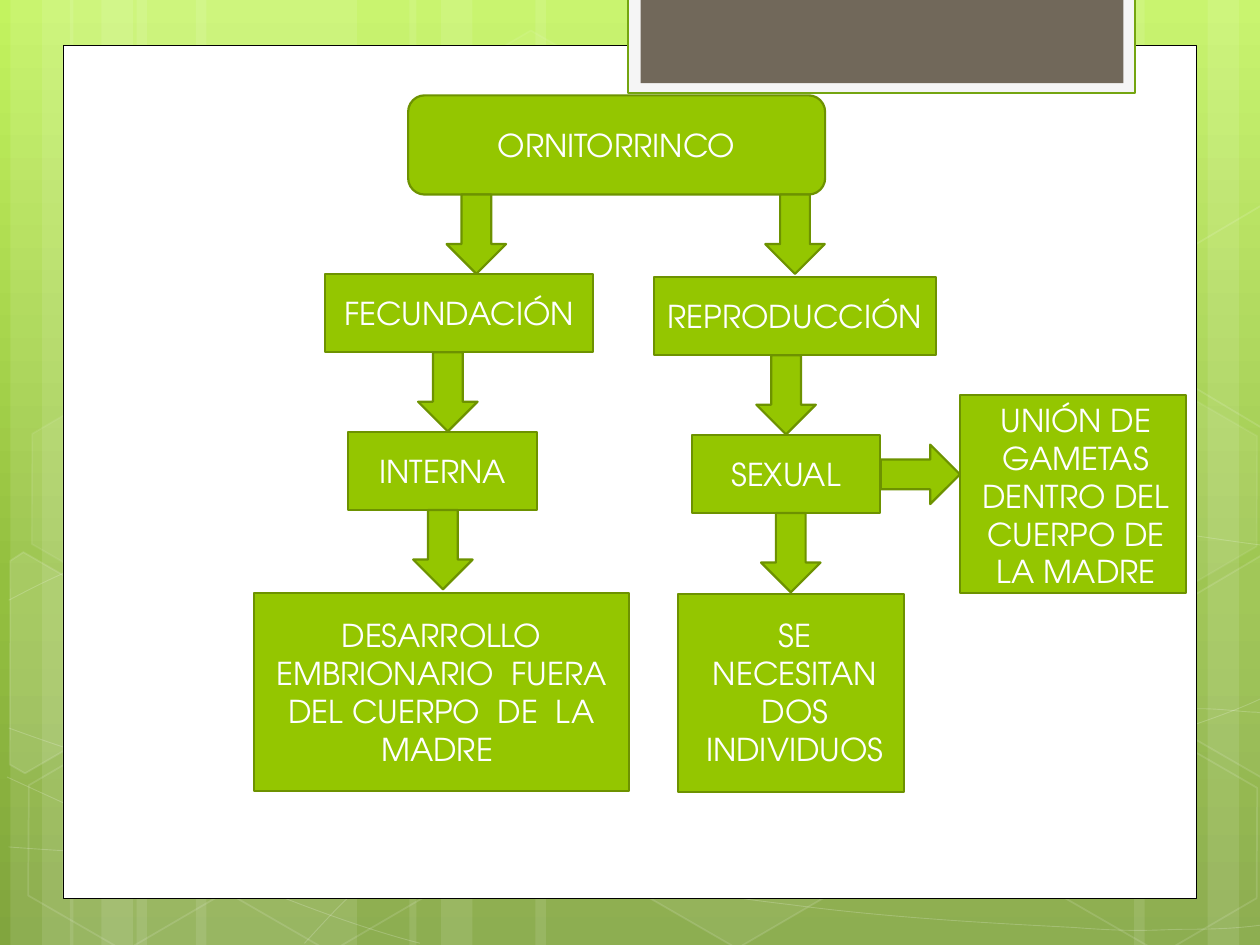
from copy import deepcopy
from math import cos, radians, sin
from lxml import etree
from pptx import Presentation
from pptx.dml.color import RGBColor
from pptx.enum.shapes import MSO_SHAPE as SHAPE
from pptx.enum.text import MSO_ANCHOR, MSO_AUTO_SIZE, PP_ALIGN
from pptx.oxml.ns import qn
from pptx.util import Pt

WHITE, GREEN, DARK_GREEN = "FFFFFF", "94C600", "6D9200"
FONT = "TeX Gyre Adventor"
TILT = 30


def colour(fill, value, opacity=100):
    fill.solid()
    fill.fore_color.rgb = RGBColor.from_string(value)
    if opacity < 100:
        rgb = fill._xPr.find(qn("a:solidFill"))[0]
        etree.SubElement(rgb, qn("a:alpha"), val=str(opacity * 1000))


def style(shape, fill=None, line=None, width=1.25, fill_opacity=100, line_opacity=100):
    shape.shadow.inherit = False
    if fill:
        colour(shape.fill, fill, fill_opacity)
    else:
        shape.fill.background()
    if line:
        colour(shape.line.fill, line, line_opacity)
        shape.line.width = Pt(width)
    else:
        shape.line.fill.background()


prs = Presentation()
prs.slide_width, prs.slide_height = Pt(720), Pt(540)
slide = prs.slides.add_slide(prs.slide_layouts[6])
shapes = slide.shapes

backdrop = slide.background.fill
backdrop.gradient()
backdrop.gradient_angle = 270
stop_list = slide.element.find(".//" + qn("a:gsLst"))
stop_list.append(deepcopy(stop_list[-1]))
gradient = [(0, "C3F35F"), (0.62, "93BF3F"), (1, "81A53E")]
for stop, (position, value) in zip(backdrop.gradient_stops, gradient):
    stop.position = position
    stop.color.rgb = RGBColor.from_string(value)

stripes = [(78, 126, 0), (6, 36, 0), (24, 60, 0), (112, 126, 0), (40, 36, 0), (58, 60, 0),
           (528, 126, 180), (690, 36, 180), (648, 60, 180),
           (306, 222, 0), (234, 36, 0), (252, 60, 0)]
for left, width, rotation in stripes:
    stripe = shapes.add_shape(SHAPE.RECTANGLE, Pt(left), 0, Pt(width), Pt(540))
    stripe.rotation = rotation
    style(stripe, WHITE, fill_opacity=10)

waves = [
    [(5, 484.5), (44, 487), (83, 489), (137, 488), (191, 487), (258, 486), (330, 479),
     (402, 472), (504, 458), (570, 444), (636, 431), (703, 409), (725, 397)],
    [(5, 343), (26, 332), (47, 321), (87, 310), (128, 300), (186, 284), (250, 279),
     (314, 274), (392, 273), (471, 279), (550, 284), (682, 307), (725, 312)],
    [(4, 444), (91, 484), (177, 523), (240, 539)],
    [(5, 416), (27, 424), (50, 432), (92, 444), (134, 454), (197, 472), (257, 485),
     (317, 497), (392, 510), (452, 517), (512, 525), (576, 528), (614, 530),
     (652, 533), (662, 531), (680, 531), (699, 531), (712, 530), (725, 528)],
    [(174, 539), (187, 525), (200, 510), (217, 498), (235, 485), (259, 470), (279, 460),
     (300, 450), (312, 446), (338, 438), (364, 431), (413, 421), (438, 416),
     (464, 411), (467, 411), (490, 410), (512, 408), (547, 405), (572, 405),
     (597, 404), (638, 405), (638, 405), (654, 405), (670, 405), (686, 405),
     (699, 405), (711, 407), (718, 407), (724, 408), (722, 407), (724, 408)],
]
for knots in waves:
    builder = shapes.build_freeform(*knots[0], scale=Pt(1))
    builder.add_line_segments(knots[1:], close=False)
    wave = builder.convert_to_shape()
    segments = list(wave.element.iter(qn("a:lnTo")))
    for i in range(0, len(segments), 3):
        curve = etree.Element(qn("a:cubicBezTo"))
        segments[i].addprevious(curve)
        for segment in segments[i:i + 3]:
            curve.append(segment[0])
            segment.getparent().remove(segment)
    style(wave, line=WHITE, width=0.5, line_opacity=20)

hexagons = [(240.5, 26, 4, 8), (358, 424, 6, 12), (8, 425.5, 0, 12), (10, 224.6, 7, 8),
            (125.5, 426, 0, 12), (542, 326, 10, 12), (600.5, 427, 0, 12), (600.5, 226, 7, 8)]
for left, top, fill_opacity, line_opacity in hexagons:
    hexagon = shapes.add_shape(SHAPE.HEXAGON, Pt(left), Pt(top), Pt(126), Pt(109.5))
    hexagon.adjustments[0] = 0.285
    hexagon.rotation = TILT
    style(hexagon, WHITE if fill_opacity else None, WHITE, 1, fill_opacity, line_opacity)

cut_hexagons = [
    (25.9, 385.2, 10, [(5.8, 320.4), (13.7, 315.4), (69.1, 347), (68.4, 410.4),
                       (14.4, 442.1), (5.8, 437)]),
    (709.2, 374.4, 4, [(666.7, 349.2), (720.7, 317.5), (726.5, 321.1), (726.5, 441.4),
                       (721.4, 444.2), (666.7, 412.6)]),
    (709.2, 173.5, 0, [(666.7, 149), (720.7, 117.4), (727.2, 121), (726.5, 241.2),
                       (721.4, 244.1), (666.7, 212.4)]),
]
turn_cos, turn_sin = cos(radians(TILT)), sin(radians(TILT))
for centre_x, centre_y, fill_opacity, corners in cut_hexagons:
    upright = []
    for x, y in corners:
        dx, dy = x - centre_x, y - centre_y
        upright.append((centre_x + dx * turn_cos + dy * turn_sin,
                        centre_y - dx * turn_sin + dy * turn_cos))
    builder = shapes.build_freeform(*upright[0], scale=Pt(1))
    builder.add_line_segments(upright[1:])
    cut_hexagon = builder.convert_to_shape()
    cut_hexagon.rotation = TILT
    style(cut_hexagon, WHITE if fill_opacity else None, WHITE, 1, fill_opacity, 12)

panels = [(36, 26, 648, 487.2, WHITE, "000000", 0.5),
          (359, -1.5, 289.5, 54.5, "F5F5F5", "74A510", 1.25),
          (366, -1.5, 276, 49, "71685A", None, 0)]
for left, top, width, height, fill, line, weight in panels:
    panel = shapes.add_shape(SHAPE.RECTANGLE, Pt(left), Pt(top), Pt(width), Pt(height))
    style(panel, fill, line, weight)

labels = []
diagram = [
    (SHAPE.ROUNDED_RECTANGLE, 233.2, 54.5, 238.3, 56.7, "ORNITORRINCO"),
    (SHAPE.DOWN_ARROW, 437.3, 111.2, 34, 45.3, ""),
    (SHAPE.DOWN_ARROW, 255.2, 111.2, 34, 45.3, ""),
    (SHAPE.RECTANGLE, 373.6, 158.3, 161.4, 44.7, "REPRODUCCIÓN"),
    (SHAPE.RECTANGLE, 185.7, 156.6, 153.3, 44.6, "FECUNDACIÓN"),
    (SHAPE.DOWN_ARROW, 238.9, 201.3, 34, 45.3, ""),
    (SHAPE.DOWN_ARROW, 432.2, 203, 34, 45.3, ""),
    (SHAPE.RECTANGLE, 199, 246.8, 108, 44.7, "INTERNA"),
    (SHAPE.RECTANGLE, 145, 338.8, 214.7, 113.2,
     "DESARROLLO EMBRIONARIO  FUERA DEL CUERPO  DE  LA MADRE "),
    (SHAPE.DOWN_ARROW, 236.1, 291.5, 34, 45.3, ""),
    (SHAPE.RECTANGLE, 395.3, 248.5, 107.8, 44.7, "SEXUAL"),
    (SHAPE.DOWN_ARROW, 434.9, 293.2, 34, 45.3, ""),
    (SHAPE.RECTANGLE, 387.4, 339.5, 129.2, 113.2, ""),
    (None, 394.8, 348.7, 118.8, 94.3, "SE NECESITAN DOS INDIVIDUOS"),
    (SHAPE.RECTANGLE, 548.5, 225.9, 129.2, 113.2, ""),
    (SHAPE.DOWN_ARROW, 508.9, 248.4, 34, 45.3, ""),
    (None, 552.2, 225.7, 125.3, 116.6, "UNIÓN DE GAMETAS DENTRO DEL CUERPO DE LA MADRE"),
]
for kind, left, top, width, height, text in diagram:
    frame_at = Pt(left), Pt(top), Pt(width), Pt(height)
    if kind is None:
        part = shapes.add_textbox(*frame_at)
        part.text_frame.auto_size = MSO_AUTO_SIZE.SHAPE_TO_FIT_TEXT
    else:
        part = shapes.add_shape(kind, *frame_at)
        part.text_frame.vertical_anchor = MSO_ANCHOR.MIDDLE
        style(part, GREEN, DARK_GREEN)
        if kind == SHAPE.DOWN_ARROW and left > 500:
            part.rotation = 270
    if text:
        labels.append((part.text_frame, text))

for frame, text in labels:
    frame.word_wrap = True
    frame.text = text
    paragraph = frame.paragraphs[0]
    paragraph.alignment = PP_ALIGN.CENTER
    font = paragraph.runs[0].font
    font.name, font.size = FONT, Pt(18)
    colour(font.fill, WHITE)

prs.save("out.pptx")
